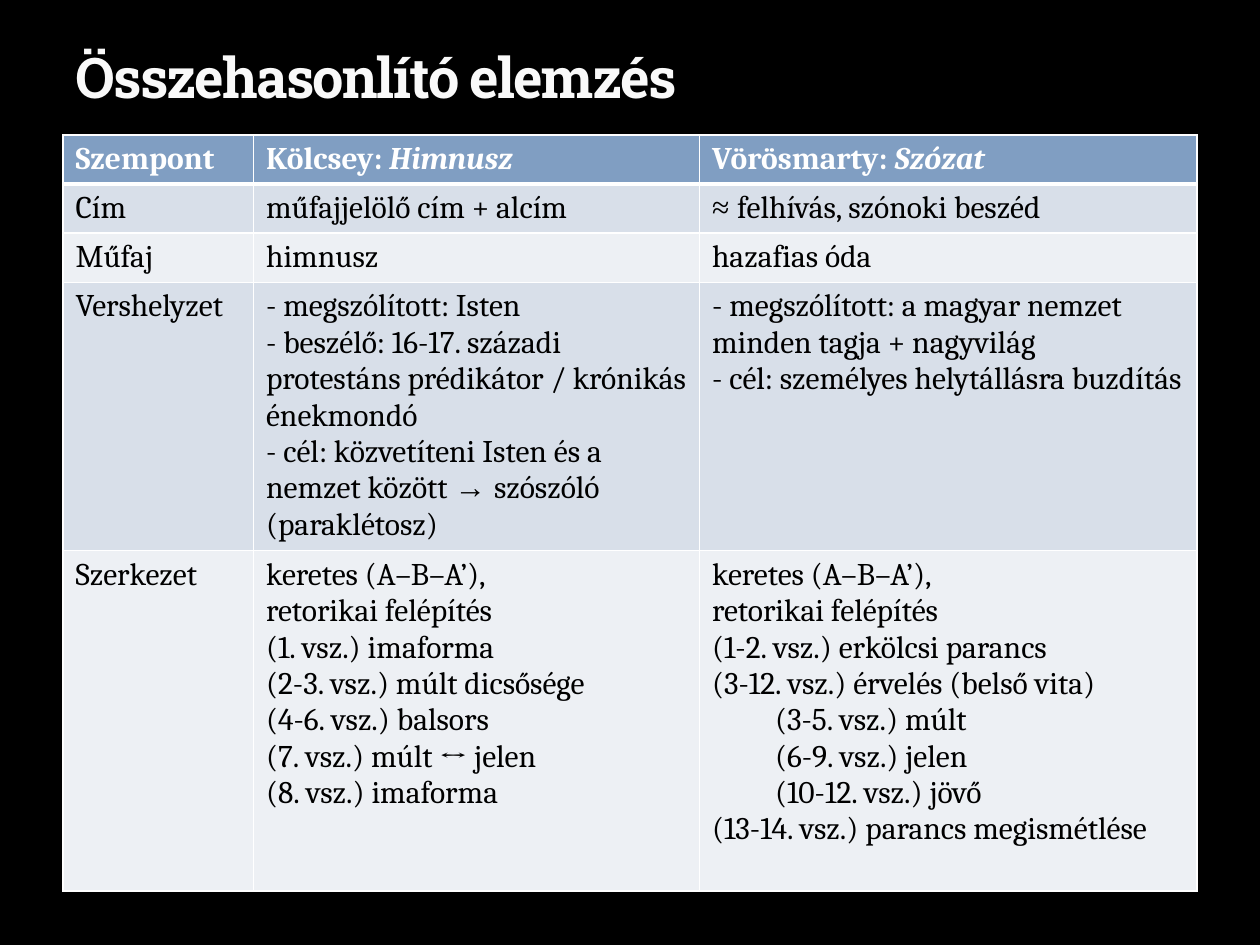
from dataclasses import dataclass

from lxml.etree import SubElement
from pptx import Presentation
from pptx.dml.color import RGBColor
from pptx.enum.text import MSO_ANCHOR as Anchor, MSO_AUTO_SIZE as AutoSize, PP_ALIGN as Align
from pptx.oxml.ns import qn
from pptx.util import Cm, Pt

BLACK = RGBColor(0x00, 0x00, 0x00)
WHITE = RGBColor(0xFF, 0xFF, 0xFF)
TITLE_WHITE = RGBColor(0xF9, 0xF9, 0xF9)
HEADER_BLUE = RGBColor(0x80, 0x9E, 0xC2)
BAND_BLUE = RGBColor(0xD8, 0xDF, 0xE9)
BAND_PALE = RGBColor(0xED, 0xF0, 0xF4)

BODY_FONT = "Cambria"
SYMBOL_FONT = "Times New Roman"
LEFT, WIDTH = Cm(1.27), Cm(22.86)
COLUMN_WIDTHS = [Cm(3.84), Cm(8.99), Cm(10.03)]
ROW_HEIGHTS = [Cm(0.99)] * 3 + [Cm(5.41), Cm(6.86)]


@dataclass(frozen=True)
class Span:
    text: str
    font: str = BODY_FONT
    italic: bool = False


@dataclass(frozen=True)
class Line:
    spans: tuple[Span, ...]
    level: int = 0


def plain(*texts: str, level: int = 0) -> list[Line]:
    return [Line((Span(text),), level) for text in texts]


def poem(author: str, work: str) -> list[Line]:
    return [Line((Span(f"{author}: "), Span(work, italic=True)))]


FRAME = plain("keretes (A–B–A’),", "retorikai felépítés")

COMPARISON = [
    [plain("Szempont"), poem("Kölcsey", "Himnusz"), poem("Vörösmarty", "Szózat")],
    [
        plain("Cím"),
        plain("műfajjelölő cím + alcím"),
        [Line((Span("≈ ", SYMBOL_FONT), Span("felhívás, szónoki beszéd")))],
    ],
    [plain("Műfaj"), plain("himnusz"), plain("hazafias óda")],
    [
        plain("Vershelyzet"),
        plain(
            "- megszólított: Isten",
            "- beszélő: 16-17. századi protestáns prédikátor / krónikás énekmondó",
        )
        + [Line((
            Span("- cél: közvetíteni Isten és a nemzet között "),
            Span("→ ", SYMBOL_FONT),
            Span("szószóló (paraklétosz)"),
        ))],
        plain(
            "- megszólított: a magyar nemzet minden tagja + nagyvilág",
            "- cél: személyes helytállásra buzdítás",
        ),
    ],
    [
        plain("Szerkezet"),
        FRAME
        + plain(
            "(1. vsz.) imaforma",
            "(2-3. vsz.) múlt dicsősége",
            "(4-6. vsz.) balsors",
            "(7. vsz.) múlt ↔ jelen",
            "(8. vsz.) imaforma",
        ),
        FRAME
        + plain("(1-2. vsz.) erkölcsi parancs", "(3-12. vsz.) érvelés (belső vita)")
        + plain("(3-5. vsz.) múlt", "(6-9. vsz.) jelen", "(10-12. vsz.) jövő", level=1)
        + plain("(13-14. vsz.) parancs megismétlése"),
    ],
]


def apply_format(target, values: dict) -> None:
    for attribute, value in values.items():
        setattr(target, attribute, value)


def add_borders(cell, bottom: float) -> None:
    properties = cell._tc.get_or_add_tcPr()
    for side, points in {"L": 1, "R": 1, "T": 1, "B": bottom}.items():
        border = SubElement(properties, qn(f"a:ln{side}"), w=str(Pt(points)))
        fill = SubElement(border, qn("a:solidFill"))
        SubElement(fill, qn("a:srgbClr"), val=str(WHITE))


def write_lines(cell, lines: list[Line], color: RGBColor, bold: bool) -> None:
    frame = cell.text_frame
    for index, line in enumerate(lines):
        paragraph = frame.paragraphs[0] if index == 0 else frame.add_paragraph()
        if line.level:
            paragraph.level = line.level
            apply_indent = paragraph._p.get_or_add_pPr().set
            apply_indent("marL", str(Cm(1.27) * line.level))
            apply_indent("indent", "0")
        for span in line.spans:
            run = paragraph.add_run()
            run.text = span.text
            apply_format(run.font, {
                "name": span.font, "size": Pt(18), "bold": bold, "italic": span.italic,
            })
            run.font.color.rgb = color


def add_title(slide, text: str) -> None:
    title = slide.shapes.title
    apply_format(title, {"left": LEFT, "top": Cm(0.43), "width": WIDTH, "height": Cm(1.9)})
    frame = title.text_frame
    apply_format(frame, {"vertical_anchor": Anchor.BOTTOM, "auto_size": AutoSize.NONE})
    paragraph = frame.paragraphs[0]
    paragraph.alignment = Align.LEFT
    run = paragraph.add_run()
    run.text = text
    apply_format(run.font, {"name": "Roboto Slab", "size": Pt(32), "bold": True})
    run.font.color.rgb = TITLE_WHITE
    run._r.get_or_add_rPr().set("spc", "-100")


def add_comparison(slide, rows: list[list[list[Line]]]) -> None:
    table = slide.shapes.add_table(
        len(rows), len(COLUMN_WIDTHS), LEFT, Cm(2.72), WIDTH, sum(ROW_HEIGHTS)
    ).table
    for column, width in zip(table.columns, COLUMN_WIDTHS):
        column.width = width
    for row, height in zip(table.rows, ROW_HEIGHTS):
        row.height = height
    for row_index, row in enumerate(rows):
        header = row_index == 0
        band = HEADER_BLUE if header else (BAND_PALE, BAND_BLUE)[row_index % 2]
        for column_index, lines in enumerate(row):
            cell = table.cell(row_index, column_index)
            add_borders(cell, bottom=3 if header else 1)
            cell.fill.solid()
            cell.fill.fore_color.rgb = band
            write_lines(cell, lines, WHITE if header else BLACK, bold=header)


def main() -> None:
    presentation = Presentation()
    apply_format(presentation, {"slide_width": Cm(25.4), "slide_height": Cm(19.05)})
    slide = presentation.slides.add_slide(presentation.slide_layouts[5])
    slide.background.fill.solid()
    slide.background.fill.fore_color.rgb = BLACK
    add_title(slide, "Összehasonlító elemzés")
    add_comparison(slide, COMPARISON)
    presentation.save("out.pptx")


if __name__ == "__main__":
    main()
